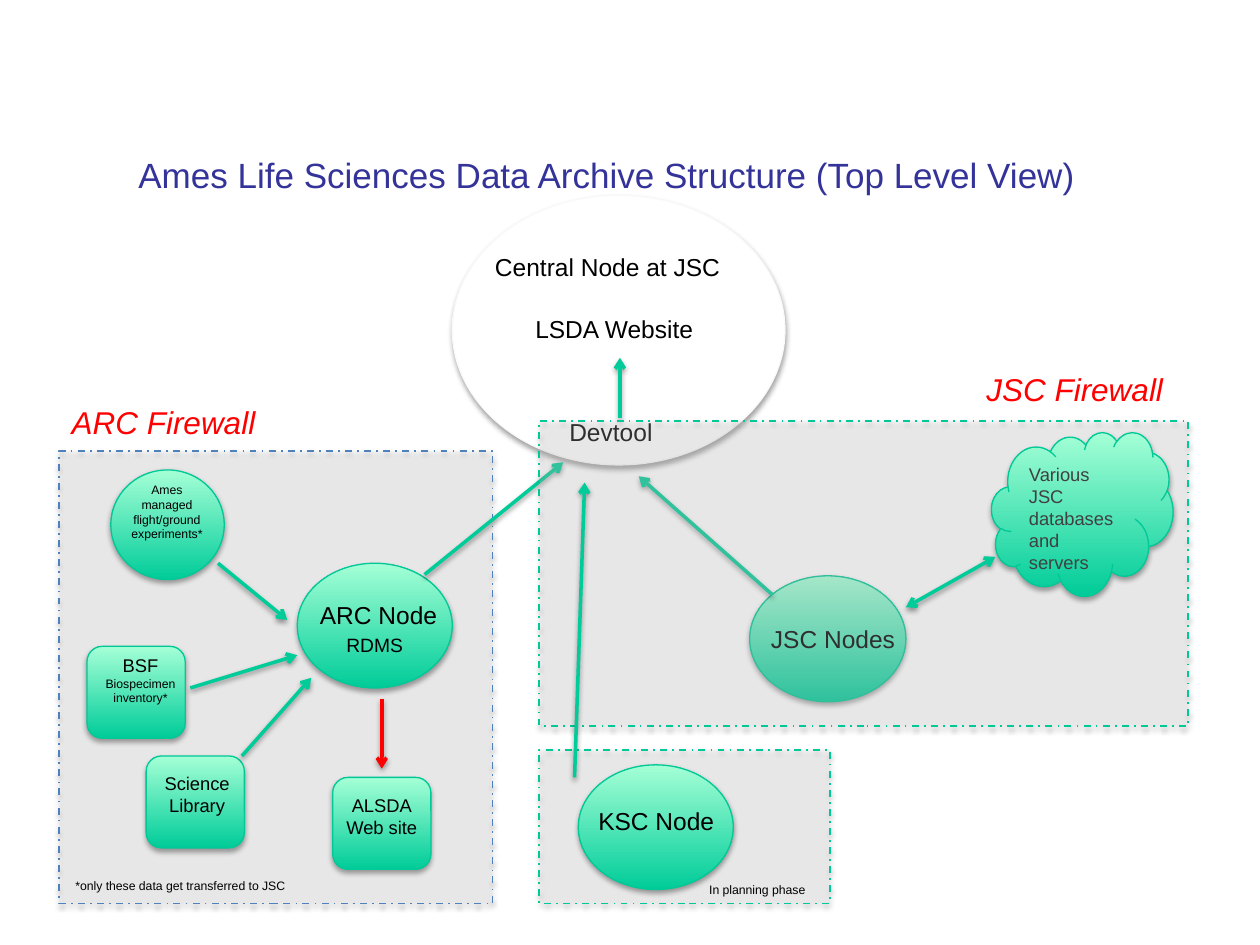
"""Build the life sciences data archive structure slide."""
from dataclasses import dataclass

from lxml import etree
from pptx import Presentation
from pptx import util as u
from pptx.dml import color
from pptx.enum import dml, shapes, text
from pptx.oxml import ns

GREEN, EDGE, MINT = "00CC99", "00C896", "A5FFD6"
RED, BLACK = "FF0000", "000000"
KIND = shapes.MSO_SHAPE


@dataclass
class Panel:
    """Translucent dashed area behind a firewall."""
    box: tuple
    line: str = EDGE


@dataclass
class Node:
    """Filled shape with an optional label."""
    kind: KIND
    box: tuple
    label: str = ""
    plain: bool = False


@dataclass
class Label:
    """Text box whose lines are (text, size) pairs."""
    box: tuple
    lines: list
    ink: str = BLACK
    centred: bool = False
    wrap: bool = False
    italic: bool = False


@dataclass
class Arrow:
    """Line with an open arrowhead."""
    start: tuple
    end: tuple
    ink: str = GREEN
    both: bool = False


def rgb(value: str) -> color.RGBColor:
    """Turn a hex string into a colour."""
    return color.RGBColor.from_string(value)


def apply(target, values: dict) -> None:
    """Set every attribute named in the values."""
    for name, value in values.items():
        setattr(target, name, value)


def add_child(parent, tag: str, **attributes: str):
    """Append a drawing element."""
    return etree.SubElement(parent, ns.qn(tag), attributes)


def add_shadow(shape, opacity: int, distance: float) -> None:
    """Give the shape a soft shadow straight below."""
    effects = add_child(shape._element.spPr, "a:effectLst")
    outer = add_child(effects, "a:outerShdw", blurRad=str(u.Pt(3.1)),
                      dist=str(u.Pt(distance)), dir="5400000", rotWithShape="0")
    tone = add_child(outer, "a:srgbClr", val=BLACK)
    add_child(tone, "a:alpha", val=str(opacity * 1000))


def write(frame, lines: list, ink: str, centred: bool = False, italic: bool = False) -> None:
    """Fill a text frame, one paragraph for each line."""
    for index, (words, size) in enumerate(lines):
        paragraph = frame.add_paragraph() if index else frame.paragraphs[0]
        paragraph.alignment = text.PP_ALIGN.CENTER if centred else text.PP_ALIGN.LEFT
        run = paragraph.add_run()
        run.text = words
        apply(run.font, {"name": "Arial", "size": u.Pt(size), "italic": italic})
        run.font.color.rgb = rgb(ink)


def add_outlined(slide, kind: KIND, box: tuple, line: str, width: float):
    """Add a preset shape with a coloured outline."""
    shape = slide.shapes.add_shape(kind, *map(u.Inches, box))
    shape.line.color.rgb = rgb(line)
    shape.line.width = u.Pt(width)
    return shape


def draw_panel(slide, panel: Panel) -> None:
    """Draw a firewall area."""
    shape = add_outlined(slide, KIND.RECTANGLE, panel.box, panel.line, 1)
    shape.line.dash_style = dml.MSO_LINE.DASH_DOT
    shape.fill.solid()
    shape.fill.fore_color.rgb = rgb("D9D9D9")
    tone = shape._element.spPr.find(ns.qn("a:solidFill"))[0]
    add_child(tone, "a:alpha", val="22000")
    add_shadow(shape, 35, 1.8)


def draw_node(slide, node: Node) -> None:
    """Draw a white or green gradient node."""
    shape = add_outlined(slide, node.kind, node.box, "F9F9F9" if node.plain else EDGE, 0.75)
    if node.plain:
        shape.fill.solid()
        shape.fill.fore_color.rgb = rgb("FFFFFF")
    else:
        shape.fill.gradient()
        shape.fill.gradient_angle = 90
        for stop, tone, position in zip(shape.fill.gradient_stops, (GREEN, MINT), (0, 1)):
            stop.color.rgb = rgb(tone)
            stop.position = position
    add_shadow(shape, 35, 1.8)
    if node.label:
        shape.text_frame.vertical_anchor = text.MSO_ANCHOR.TOP
        write(shape.text_frame, [(node.label, 10.5)], "404040")


def draw_label(slide, label: Label) -> None:
    """Draw a text box."""
    frame = slide.shapes.add_textbox(*map(u.Inches, label.box)).text_frame
    apply(frame, {"word_wrap": label.wrap, "auto_size": text.MSO_AUTO_SIZE.SHAPE_TO_FIT_TEXT})
    write(frame, label.lines, label.ink, label.centred, label.italic)


def draw_arrow(slide, arrow: Arrow) -> None:
    """Draw an arrow between two points."""
    connector = slide.shapes.add_connector(
        shapes.MSO_CONNECTOR.STRAIGHT, *map(u.Inches, arrow.start + arrow.end))
    connector.line.color.rgb = rgb(arrow.ink)
    connector.line.width = u.Pt(2)
    outline = connector.line._get_or_add_ln()
    for tag in ("a:headEnd", "a:tailEnd") if arrow.both else ("a:tailEnd",):
        add_child(outline, tag, type="arrow")
    add_shadow(connector, 38, 1.6)


DRAW = {Panel: draw_panel, Node: draw_node, Label: draw_label, Arrow: draw_arrow}

ITEMS = [
    Panel((0.47, 3.58, 3.44, 3.59), "4F81BD"),
    *(Node(KIND.ROUNDED_RECTANGLE, (left, top, 0.78, 0.73))
      for left, top in ((2.64, 6.17), (1.16, 6), (0.69, 5.13))),
    Label((1, 1.17, 8.67, 0.92),
          [("Ames Life Sciences Data Archive Structure (Top Level View)", 20)], "333399", wrap=True),
    Node(KIND.OVAL, (2.36, 4.47, 1.23, 0.99)),
    Node(KIND.OVAL, (5.95, 4.57, 1.24, 1)),
    Node(KIND.OVAL, (3.59, 1.55, 2.64, 2.14), plain=True),
    Label((6.02, 4.9, 1.19, 0.34), [("JSC Nodes", 14)]),
    Label((3.83, 1.95, 2.19, 0.34), [("Central Node at JSC", 14)], wrap=True),
    Label((4.15, 2.44, 1.46, 0.34), [("LSDA Website", 14)]),
    Label((4.42, 3.26, 0.87, 0.34), [("Devtool", 14)]),
    Label((2.65, 4.98, 0.66, 0.29), [("RDMS", 11)]),
    Arrow((3.37, 4.56), (4.47, 3.67)),
    Arrow((6.13, 4.72), (5.07, 3.78)),
    Arrow((4.92, 3.32), (4.92, 2.84)),
    Arrow((3.03, 5.55), (3.03, 6.1), RED),
    Label((2.64, 6.25, 0.78, 0.45), [("ALSDA", 10.5), ("Web site", 10.5)], centred=True),
    Label((1.2, 6.08, 0.73, 0.45), [("Science", 10.5), ("Library", 10.5)], centred=True),
    Arrow((1.92, 6), (2.47, 5.38)),
    Arrow((1.51, 5.46), (2.36, 5.2)),
    Label((0.56, 5.14, 1.11, 0.52), [("BSF", 10.5), ("Biospecimen inventory*", 7)],
          centred=True, wrap=True),
    Panel((4.28, 3.34, 5.15, 2.42)),
    Label((0.47, 3.15, 2.09, 0.4), [("ARC Firewall", 18)], RED, wrap=True, italic=True),
    Label((7.73, 2.89, 2.09, 0.4), [("JSC Firewall", 18)], RED, wrap=True, italic=True),
    Node(KIND.CLOUD, (7.87, 3.43, 1.44, 1.3), "Various JSC databases and servers"),
    Arrow((7.19, 4.82), (7.9, 4.42), both=True),
    Node(KIND.OVAL, (0.88, 3.73, 0.9, 0.87)),
    Label((0.77, 3.78, 1.11, 0.57), [("Ames", 7), ("managed flight/ground experiments*", 7)],
          centred=True, wrap=True),
    Arrow((1.73, 4.47), (2.28, 4.92)),
    Label((0.5, 6.92, 1.9, 0.22), [("*only these data get transferred to JSC", 7)]),
    Panel((4.28, 5.95, 2.31, 1.22)),
    Node(KIND.OVAL, (4.59, 6.07, 1.23, 0.99)),
    Label((4.65, 6.35, 1.13, 0.34), [("KSC Node", 14)]),
    Arrow((4.56, 6.17), (4.64, 3.83)),
    Label((5.53, 6.95, 0.98, 0.22), [("In planning phase", 7)]),
    Label((2.44, 4.71, 1.14, 0.34), [("ARC Node", 14)]),
]


def main() -> None:
    """Draw every item and save the presentation."""
    presentation = Presentation()
    apply(presentation, {"slide_width": u.Inches(10), "slide_height": u.Inches(7.5)})
    slide = presentation.slides.add_slide(presentation.slide_layouts[6])
    for item in ITEMS:
        DRAW[type(item)](slide, item)
    presentation.save("out.pptx")


if __name__ == "__main__":
    main()
